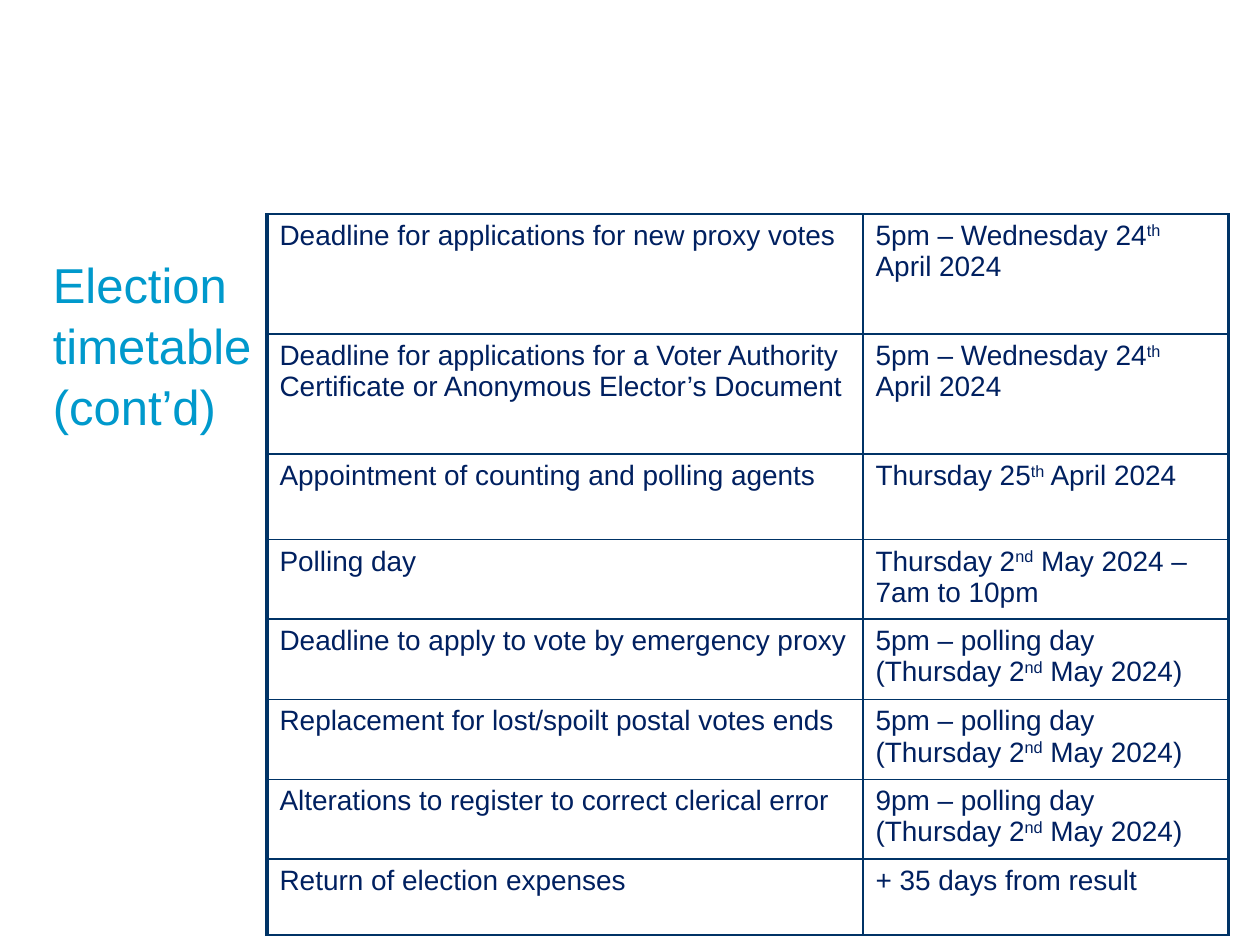
from lxml import etree
from pptx import Presentation
from pptx.dml.color import RGBColor
from pptx.enum import text
from pptx.oxml import ns
from pptx.util import Pt

COLORS = {"title": "0099CC", "body": "002060", "border": "003366"}
FONT = "Arial"
COLUMN_WIDTHS = [340.6, 208.8]
ROW_HEIGHTS = [68.6, 68.6, 48.9, 45.4, 46, 45.7, 45.4, 43.7]
PROXY_DATE = ("5pm – Wednesday 24", "th", " April 2024")
POLLING_5PM = ("5pm – polling day (Thursday 2", "nd", " May 2024)")
TIMETABLE = [
    ("Deadline for applications for new proxy votes", PROXY_DATE),
    ("Deadline for applications for a Voter Authority Certificate or "
     "Anonymous Elector’s Document", PROXY_DATE),
    ("Appointment of counting and polling agents",
     ("Thursday 25", "th", " April 2024")),
    ("Polling day", ("Thursday 2", "nd", " May 2024 – 7am to 10pm")),
    ("Deadline to apply to vote by emergency proxy", POLLING_5PM),
    ("Replacement for lost/spoilt postal votes ends", POLLING_5PM),
    ("Alterations to register to correct clerical error",
     ("9pm – polling day (Thursday 2", "nd", " May 2024)")),
    ("Return of election expenses", ("+ 35 days from result",)),
]


def format_paragraph(paragraph, size, color):
    paragraph.alignment = text.PP_ALIGN.LEFT
    paragraph.font.name = FONT
    paragraph.font.size = Pt(size)
    paragraph.font.bold = False
    paragraph.font.color.rgb = RGBColor.from_string(COLORS[color])


def place_title(slide, left, top, width, height):
    title = slide.shapes.title
    title.left, title.top = Pt(left), Pt(top)
    title.width, title.height = Pt(width), Pt(height)
    frame = title.text_frame
    frame.text = "Election timetable (cont’d)"
    frame.word_wrap = True
    frame.auto_size = text.MSO_AUTO_SIZE.NONE
    frame.vertical_anchor = text.MSO_ANCHOR.TOP
    frame.margin_left = frame.margin_right = 0
    frame.margin_top = frame.margin_bottom = 0
    paragraph = frame.paragraphs[0]
    paragraph.line_spacing = 1.04
    format_paragraph(paragraph, 28, "title")


def set_borders(cell, widths):
    properties = cell._tc.get_or_add_tcPr()
    for side, width in zip("LRTB", widths):
        line = etree.SubElement(properties, ns.qn(f"a:ln{side}"), w=str(Pt(width)))
        fill = etree.SubElement(line, ns.qn("a:solidFill"))
        etree.SubElement(fill, ns.qn("a:srgbClr"), val=COLORS["border"])


def fill_cell(cell, parts, border_widths):
    set_borders(cell, border_widths)
    cell.fill.background()
    paragraph = cell.text_frame.paragraphs[0]
    for index, part in enumerate(parts):
        run = paragraph.add_run()
        run.text = part
        if index == 1:
            run._r.get_or_add_rPr().set("baseline", "30000")
    format_paragraph(paragraph, 16, "body")


def place_timetable(slide, left, top):
    frame = slide.shapes.add_table(
        len(TIMETABLE), len(COLUMN_WIDTHS), Pt(left), Pt(top),
        Pt(sum(COLUMN_WIDTHS)), Pt(sum(ROW_HEIGHTS)))
    table = frame.table
    table.first_row = table.horz_banding = False
    for column, width in zip(table.columns, COLUMN_WIDTHS):
        column.width = Pt(width)
    for row, height, (event, date) in zip(table.rows, ROW_HEIGHTS, TIMETABLE):
        row.height = Pt(height)
        fill_cell(row.cells[0], (event,), (2.25, 1, 1, 1))
        fill_cell(row.cells[1], date, (1, 2.25, 1, 1))


def main():
    presentation = Presentation()
    presentation.slide_width, presentation.slide_height = Pt(720), Pt(540)
    slide = presentation.slides.add_slide(presentation.slide_layouts[5])
    place_title(slide, 30.2, 144, 198, 336)
    place_timetable(slide, 152.6, 122.2)
    presentation.save("out.pptx")


if __name__ == "__main__":
    main()
